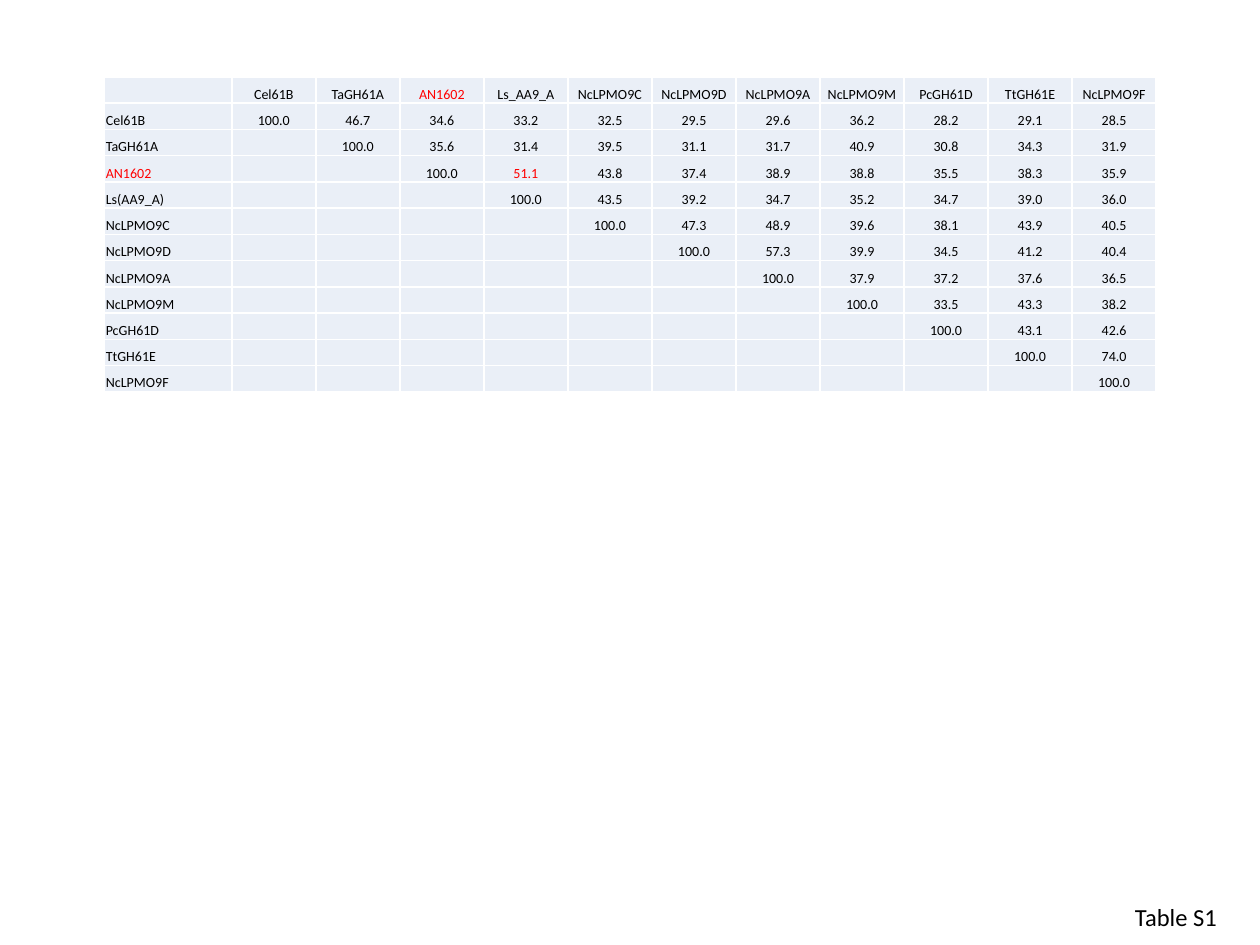
from dataclasses import dataclass

from lxml import etree
from pptx import Presentation
from pptx.dml.color import RGBColor
from pptx.enum.text import MSO_ANCHOR, MSO_AUTO_SIZE, PP_ALIGN
from pptx.oxml.ns import qn
from pptx.util import Inches, Pt

LEFT, CENTER = PP_ALIGN.LEFT, PP_ALIGN.CENTER
BOTTOM = MSO_ANCHOR.BOTTOM
FIT_SHAPE = MSO_AUTO_SIZE.SHAPE_TO_FIT_TEXT

BLACK = RGBColor(0x00, 0x00, 0x00)
RED = RGBColor(0xFF, 0x00, 0x00)
WHITE = RGBColor(0xFF, 0xFF, 0xFF)
PALE_BLUE = RGBColor(0xEA, 0xEF, 0xF7)

FONT = "Calibri"
CELL_SIZE = Pt(8)
TABLE_WIDTH, TABLE_HEIGHT, LABEL_WIDTH = 8.35, 2.5, 1.01
CELL_FORMAT = {
    "margin_left": Inches(0.01),
    "margin_right": Inches(0.01),
    "margin_top": Inches(0.01),
    "margin_bottom": 0,
    "vertical_anchor": BOTTOM,
}
HIGHLIGHTS = {"AN1602", "51.1"}


@dataclass(frozen=True)
class Enzyme:
    """An enzyme and its identities, from itself to the last column."""
    column_label: str
    identities: str
    row_label: str = ""


ENZYMES = [
    Enzyme("Cel61B", "100.0 46.7 34.6 33.2 32.5 29.5 29.6 36.2 28.2 29.1 28.5"),
    Enzyme("TaGH61A", "100.0 35.6 31.4 39.5 31.1 31.7 40.9 30.8 34.3 31.9"),
    Enzyme("AN1602", "100.0 51.1 43.8 37.4 38.9 38.8 35.5 38.3 35.9"),
    Enzyme("Ls_AA9_A", "100.0 43.5 39.2 34.7 35.2 34.7 39.0 36.0", "Ls(AA9_A)"),
    Enzyme("NcLPMO9C", "100.0 47.3 48.9 39.6 38.1 43.9 40.5"),
    Enzyme("NcLPMO9D", "100.0 57.3 39.9 34.5 41.2 40.4"),
    Enzyme("NcLPMO9A", "100.0 37.9 37.2 37.6 36.5"),
    Enzyme("NcLPMO9M", "100.0 33.5 43.3 38.2"),
    Enzyme("PcGH61D", "100.0 43.1 42.6"),
    Enzyme("TtGH61E", "100.0 74.0"),
    Enzyme("NcLPMO9F", "100.0"),
]


def matrix_rows(enzymes: list[Enzyme]) -> list[list[str]]:
    """Lay the identities out as an upper triangle with labels."""
    rows = [["", *(enzyme.column_label for enzyme in enzymes)]]
    for index, enzyme in enumerate(enzymes):
        label = enzyme.row_label or enzyme.column_label
        rows.append([label, *[""] * index, *enzyme.identities.split()])
    return rows


def add_borders(cell) -> None:
    properties = cell._tc.get_or_add_tcPr()
    for side in ("lnL", "lnR", "lnT", "lnB"):
        line = etree.SubElement(properties, qn(f"a:{side}"), w=str(Pt(1)))
        fill = etree.SubElement(line, qn("a:solidFill"))
        etree.SubElement(fill, qn("a:srgbClr"), val=str(WHITE))


def add_run(paragraph, text: str, size: Pt, color: RGBColor) -> None:
    run = paragraph.add_run()
    run.text = text
    run.font.name = FONT
    run.font.size = size
    run.font.color.rgb = color


def fill_cell(cell, text: str, alignment: PP_ALIGN) -> None:
    add_borders(cell)
    cell.fill.solid()
    cell.fill.fore_color.rgb = PALE_BLUE
    for attribute, value in CELL_FORMAT.items():
        setattr(cell, attribute, value)
    paragraph = cell.text_frame.paragraphs[0]
    paragraph.alignment = alignment
    if text:
        add_run(paragraph, text, CELL_SIZE, RED if text in HIGHLIGHTS else BLACK)
    else:
        # An empty cell needs the small size too, or its row grows
        etree.SubElement(paragraph._p, qn("a:endParaRPr"),
                         sz=str(int(CELL_SIZE.pt * 100)))


def add_identity_table(slide, rows: list[list[str]]) -> None:
    table = slide.shapes.add_table(
        len(rows), len(rows[0]), Inches(0.83), Inches(0.61),
        Inches(TABLE_WIDTH), Inches(TABLE_HEIGHT)).table
    table.first_row = False
    table.horz_banding = False
    value_width = (TABLE_WIDTH - LABEL_WIDTH) / (len(rows[0]) - 1)
    for index, column in enumerate(table.columns):
        column.width = Inches(value_width if index else LABEL_WIDTH)
    for row, texts in zip(table.rows, rows):
        row.height = Inches(TABLE_HEIGHT / len(rows))
        for index, (cell, text) in enumerate(zip(row.cells, texts)):
            fill_cell(cell, text, CENTER if index else LEFT)


def add_caption(slide, text: str) -> None:
    frame = slide.shapes.add_textbox(
        Inches(8.91), Inches(7.11), Inches(0.86), Inches(0.34)).text_frame
    frame.word_wrap = False
    frame.auto_size = FIT_SHAPE
    add_run(frame.paragraphs[0], text, Pt(14), BLACK)


def main() -> None:
    presentation = Presentation()
    presentation.slide_width = Inches(10)
    presentation.slide_height = Inches(7.5)
    slide = presentation.slides.add_slide(presentation.slide_layouts[6])
    add_identity_table(slide, matrix_rows(ENZYMES))
    add_caption(slide, "Table S1")
    presentation.save("out.pptx")


if __name__ == "__main__":
    main()
